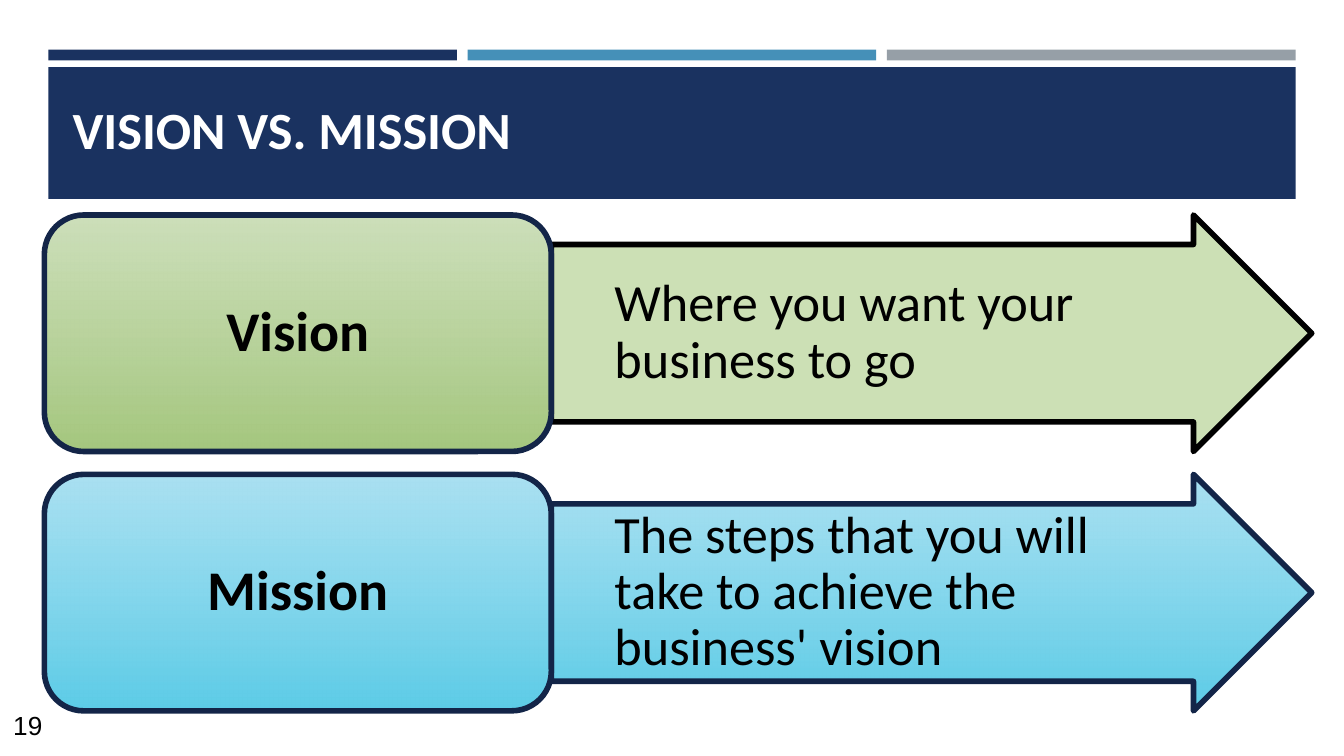
from lxml import etree
from pptx import Presentation
from pptx.dml.color import RGBColor
from pptx.enum.shapes import MSO_SHAPE
from pptx.enum.text import MSO_ANCHOR, PP_ALIGN
from pptx.oxml.ns import qn
from pptx.util import Inches, Pt

RECT = MSO_SHAPE.RECTANGLE
ROUND = MSO_SHAPE.ROUNDED_RECTANGLE
ARROW = MSO_SHAPE.RIGHT_ARROW
TOP, MIDDLE = MSO_ANCHOR.TOP, MSO_ANCHOR.MIDDLE
LEFT, CENTER = PP_ALIGN.LEFT, PP_ALIGN.CENTER

NAVY = RGBColor(0x1A, 0x32, 0x60)
BLUE = RGBColor(0x45, 0x90, 0xB8)
GRAY = RGBColor(0x96, 0x9F, 0xA7)
EDGE = RGBColor(0x13, 0x25, 0x48)
BLACK = RGBColor(0, 0, 0)
WHITE = RGBColor(0xFF, 0xFF, 0xFF)
LEAF = RGBColor(0xC6, 0xDD, 0xAC)
SAGE = RGBColor(0xC6, 0xDB, 0xB1)
GREEN = RGBColor(0xA5, 0xC7, 0x7F)
SKY = RGBColor(0x9F, 0xDD, 0xF0)
AQUA = RGBColor(0x5D, 0xCC, 0xE7)


def add_shape(slide, kind, box, colors, edge=None):
    """Add a shape with a solid fill or a downward two-colour gradient."""
    shape = slide.shapes.add_shape(kind, *map(Inches, box))
    shape.shadow.inherit = False
    if len(colors) == 1:
        shape.fill.solid()
        shape.fill.fore_color.rgb = colors[0]
    else:
        shape.fill.gradient()
        shape.fill.gradient_angle = 270
        for stop, color in zip(shape.fill.gradient_stops, colors):
            stop.color.rgb = color
    if edge is None:
        shape.line.fill.background()
    else:
        color = next(shape._element.spPr.iter(qn("a:srgbClr")))
        etree.SubElement(color, qn("a:alpha")).set("val", "89000")
        shape.line.color.rgb = edge
        shape.line.width = Pt(3)
    return shape


def set_text(shape, text, size, color=BLACK, bold=False, font="Calibri",
             align=LEFT, anchor=MIDDLE, pads=(0.1, 0.05, 0.1, 0.05), space=None):
    """Write one formatted run into a shape."""
    frame = shape.text_frame
    frame.word_wrap = True
    frame.vertical_anchor = anchor
    (frame.margin_left, frame.margin_top,
     frame.margin_right, frame.margin_bottom) = map(Inches, pads)
    para = frame.paragraphs[0]
    para.alignment = align
    para.line_spacing = space
    run = para.add_run()
    run.text = text
    run.font.name = font
    run.font.size = Pt(size)
    run.font.bold = bold
    run.font.color.rgb = color


def add_head(slide, box, text):
    """Draw three thin bars above a title band."""
    left, top, width, height = box
    gap, bar = 0.08, 0.08
    span = (width - 2 * gap) / 3
    for i, color in enumerate((NAVY, BLUE, GRAY)):
        add_shape(slide, RECT, (left + i * (span + gap), top, span, bar), [color])
    add_shape(slide, RECT, (left, top + 0.13, width, height - 0.13), [NAVY])
    title = slide.shapes.title
    title.left, title.top = Inches(left + 0.08), Inches(top + 0.25)
    title.width, title.height = Inches(9.32), Inches(0.63)
    set_text(title, text, 28, WHITE, True, anchor=TOP, pads=(0.1,) * 4)
    slide.shapes._spTree.append(title._element)


def add_row(slide, box, name, text, fills, edge):
    """Draw a named box with an arrow that explains it."""
    left, top, width, height = box
    split = 0.4 * width
    arrow = add_shape(slide, ARROW, (left + split, top, width - split, height),
                      fills[0], edge)
    arrow.adjustments[0] = 0.75
    set_text(arrow, text, 28, pads=(0.47, 0.01, 0.5, 0.01), space=0.9)
    label = add_shape(slide, ROUND, (left, top, split, height), fills[1], EDGE)
    set_text(label, name, 30, bold=True, align=CENTER, space=0.9)


def add_number(slide, box, text):
    """Write the page number."""
    note = slide.shapes.add_textbox(*map(Inches, box))
    set_text(note, text, 14, font="Arial", anchor=TOP)


def main():
    """Build and save the slide."""
    deck = Presentation()
    deck.slide_width = Inches(10)
    deck.slide_height = deck.slide_width * 9 // 16
    slide = deck.slides.add_slide(deck.slide_layouts[5])
    add_head(slide, (0.36, 0.37, 9.28, 1.11), "VISION VS. MISSION")
    add_number(slide, (0, 5.23, 0.48, 0.35), "19")
    rows = (
        ("Vision", "Where you want your business to go",
         ([LEAF], [SAGE, GREEN]), BLACK),
        ("Mission", "The steps that you will take to achieve the business' vision",
         ([SKY, AQUA], [SKY, AQUA]), EDGE),
    )
    for i, row in enumerate(rows):
        add_row(slide, (0.33, 1.6 + i * 1.93, 9.43, 1.76), *row)
    deck.save("out.pptx")


if __name__ == "__main__":
    main()
